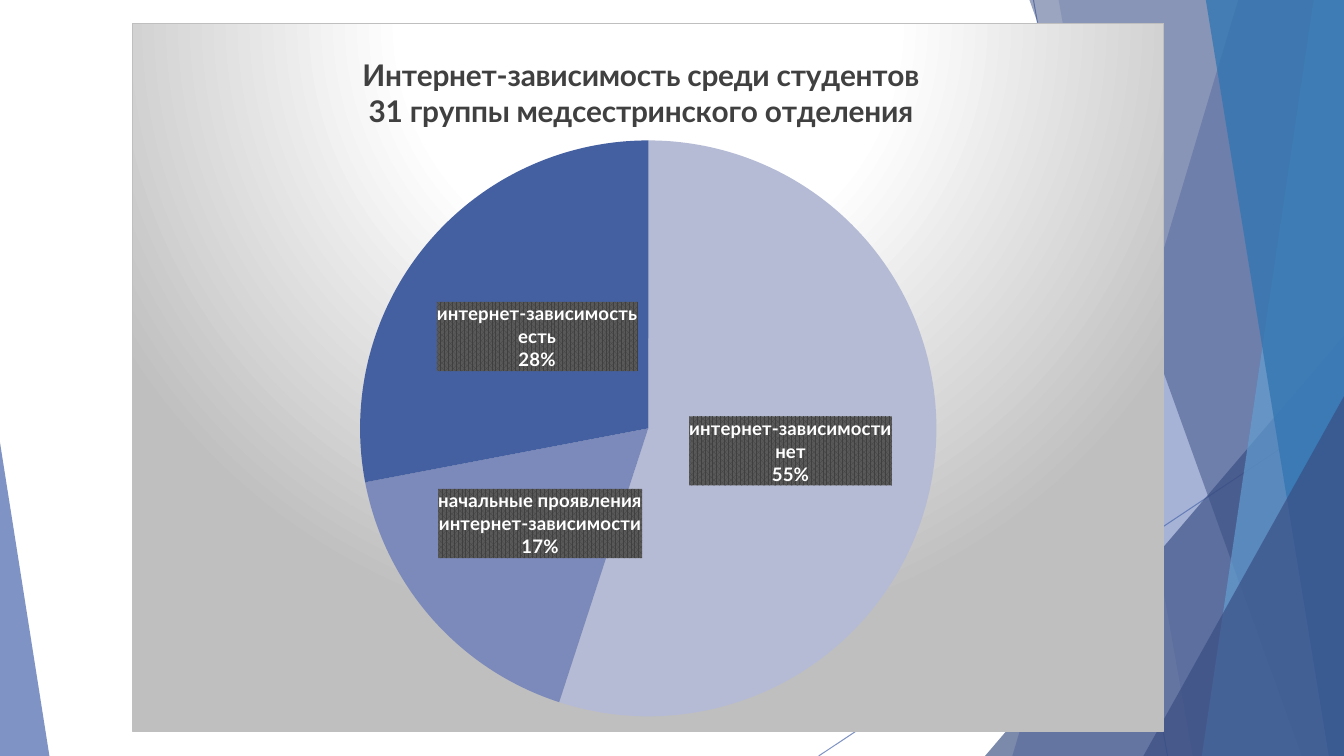
from dataclasses import dataclass

from lxml.etree import SubElement
from pptx import Presentation
from pptx.chart.chart import Chart
from pptx.chart.data import CategoryChartData
from pptx.dml.color import RGBColor
from pptx.enum.chart import XL_CHART_TYPE, XL_LABEL_POSITION
from pptx.enum.shapes import MSO_CONNECTOR, MSO_SHAPE
from pptx.oxml import parse_xml
from pptx.oxml.ns import nsdecls, qn
from pptx.slide import Slide
from pptx.util import Inches, Pt

WIDE, HIGH = 13.33, 7.5
FACE = "Lato"
BLUE, NAVY, SKY, SEA = "4A66AC", "384C81", "629DD1", "3477B2"


@dataclass
class Ray:
    start: tuple[float, float]
    end: tuple[float, float]


@dataclass
class Band:
    """A strip along the right edge, from the top x to the bottom x."""
    top: float
    low: float
    color: str
    alpha: int


@dataclass
class Wedge:
    """A triangle that stands on the bottom edge."""
    left: float
    top: float
    right: float
    apex: float
    color: str
    alpha: int


@dataclass
class Slice:
    name: str
    share: int
    color: str


RAYS = [Ray((10.25, 0), (11.58, HIGH)), Ray((WIDE, 4.03), (8.12, HIGH))]
DECOR = [
    Band(12.28, 10.04, BLUE, 36),
    Band(10.5, 11.83, BLUE, 20),
    Wedge(9.77, 3.33, WIDE, 1, NAVY, 66),
    Band(10.21, 12.91, NAVY, 50),
    Band(13.03, 11.92, SKY, 70),
    Band(11.96, 13.18, SEA, 80),
    Wedge(11.34, 3.93, WIDE, 1, NAVY, 66),
    Wedge(0, 4.39, 0.49, 0, BLUE, 70),
]
SLICES = [
    Slice("интернет-зависимости нет", 55, "B5BBD4"),
    Slice("начальные проявления интернет-зависимости", 17, "7C8ABB"),
    Slice("интернет-зависимость есть", 28, "4560A1"),
]
TITLE = "Интернет-зависимость среди студентов\n31 группы медсестринского отделения"

PANEL = f"""<c:spPr {nsdecls('c', 'a')}><a:gradFill><a:gsLst>
<a:gs pos="0"><a:srgbClr val="FFFFFF"/></a:gs>
<a:gs pos="39000"><a:srgbClr val="FFFFFF"/></a:gs>
<a:gs pos="100000"><a:srgbClr val="BFBFBF"/></a:gs></a:gsLst>
<a:path path="circle">
<a:fillToRect l="50000" t="-80000" r="50000" b="180000"/></a:path></a:gradFill>
<a:ln w="9525"><a:solidFill><a:srgbClr val="BFBFBF"/></a:solidFill></a:ln></c:spPr>"""
WEAVE = f"""<c:spPr {nsdecls('c', 'a')}><a:pattFill prst="pct75">
<a:fgClr><a:srgbClr val="404040"/></a:fgClr>
<a:bgClr><a:srgbClr val="595959"/></a:bgClr></a:pattFill>
<a:ln><a:noFill/></a:ln></c:spPr>"""


def paint(fill, color: str, alpha: int = 100) -> None:
    fill.solid()
    fill.fore_color.rgb = RGBColor.from_string(color)
    if alpha < 100:
        tint = fill._xPr.find(qn("a:solidFill"))[0]
        SubElement(tint, qn("a:alpha"), val=str(alpha * 1000))


def style(font, size: float, color: str, bold: bool = False) -> None:
    font.name, font.size, font.bold = FACE, Pt(size), bold
    paint(font.fill, color)


def write(frame, text: str, **look) -> None:
    frame.text = text
    for para in frame.paragraphs:
        for run in para.runs:
            style(run.font, **look)


def draw_ray(slide: Slide, ray: Ray) -> None:
    ends = [Inches(n) for n in (*ray.start, *ray.end)]
    line = slide.shapes.add_connector(MSO_CONNECTOR.STRAIGHT, *ends)
    line.line.width = Pt(0.75)
    paint(line.line.fill, BLUE, 70)
    SubElement(line._element.spPr, qn("a:effectLst"))


def draw_decor(slide: Slide, part: Band | Wedge) -> None:
    if isinstance(part, Band):
        edge = [(WIDE, 0), (WIDE, HIGH), (part.low, HIGH)]
        pen = slide.shapes.build_freeform(Inches(part.top), 0)
        pen.add_line_segments([(Inches(x), Inches(y)) for x, y in edge])
        shape = pen.convert_to_shape()
    else:
        box = (part.left, part.top, part.right - part.left, HIGH - part.top)
        shape = slide.shapes.add_shape(
            MSO_SHAPE.ISOSCELES_TRIANGLE, *[Inches(n) for n in box])
        shape.adjustments[0] = part.apex
    shape.shadow.inherit = False
    shape.line.fill.background()
    paint(shape.fill, part.color, part.alpha)


def place(owner, inner: bool = False, **spots: float) -> None:
    """Set a manual layout as shares of the chart area."""
    for old in owner.findall(qn("c:layout")):
        owner.remove(old)
    layout = parse_xml(f"<c:layout {nsdecls('c')}/>")
    manual = SubElement(layout, qn("c:manualLayout"))
    if inner:
        SubElement(manual, qn("c:layoutTarget"), val="inner")
    for key in ("x", "y"):
        SubElement(manual, qn(f"c:{key}Mode"), val="edge")
    for key, spot in spots.items():
        SubElement(manual, qn(f"c:{key}"), val=str(spot))
    text = owner.find(qn("c:tx"))
    owner.insert(0 if text is None else 1, layout)


def draw_pie(slide: Slide) -> Chart:
    data = CategoryChartData(number_format="General")
    data.categories = [part.name for part in SLICES]
    data.add_series("Series 1", [part.share for part in SLICES])
    box = [Inches(n) for n in (1.31, 0.23, 10.24, 7.03)]
    chart = slide.shapes.add_chart(XL_CHART_TYPE.PIE, *box, data).chart
    style(chart.font, 10, "000000")
    chart.has_legend = False

    # Title and plot area
    write(chart.chart_title.text_frame, TITLE, size=21.3, color="404040", bold=True)
    chart.chart_title.include_in_layout = False
    root = chart._chartSpace.chart
    place(root.find(qn("c:title")), x=0.22, y=0.04)
    place(root.plotArea, inner=True, x=0.22, y=0.165, w=0.56, h=0.814)

    # Slices
    plot = chart.plots[0]
    plot.vary_by_categories = True
    for spot, part in enumerate(SLICES):
        look = plot.series[0].points[spot].format
        paint(look.fill, part.color)
        look.line.fill.background()

    # Labels
    labels = plot.series[0].data_labels
    labels.show_value = False
    labels.show_percentage = labels.show_category_name = True
    labels.number_format, labels.number_format_is_linked = "0%", False
    labels.position = XL_LABEL_POSITION.CENTER
    style(labels.font, 13.3, "FFFFFF", True)
    node = labels._element
    node.find(qn("c:txPr")).addprevious(parse_xml(WEAVE))
    gap = parse_xml(f"<c:separator {nsdecls('c')}>\n</c:separator>")
    node.find(qn("c:showBubbleSize")).addnext(gap)

    # Panel behind the pie
    root.addnext(parse_xml(PANEL))
    return chart


def main() -> None:
    deck = Presentation()
    deck.slide_width, deck.slide_height = Inches(WIDE), Inches(HIGH)
    slide = deck.slides.add_slide(deck.slide_layouts[6])
    for ray in RAYS:
        draw_ray(slide, ray)
    for part in DECOR:
        draw_decor(slide, part)
    draw_pie(slide)
    deck.save("out.pptx")


if __name__ == "__main__":
    main()
